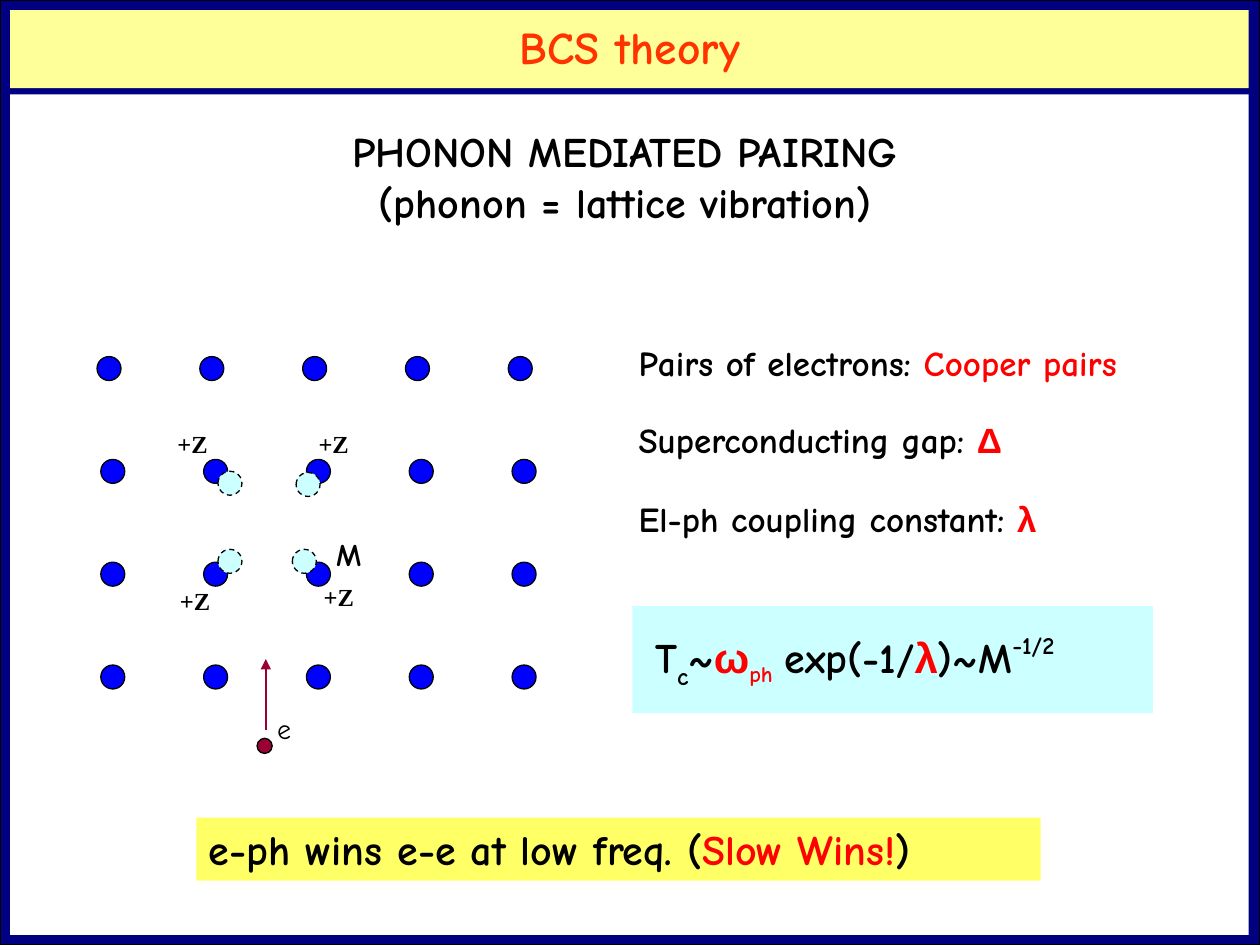
from lxml.etree import SubElement
from pptx import Presentation
from pptx.dml.color import RGBColor
from pptx.enum.dml import MSO_LINE
from pptx.enum.shapes import MSO_CONNECTOR, MSO_SHAPE
from pptx.enum.text import MSO_ANCHOR, PP_ALIGN
from pptx.oxml.ns import qn
from pptx.util import Inches, Pt

COLUMNS, ROWS = 100, 75
NAVY, PALE_YELLOW, YELLOW, CYAN = "000080", "FFFF99", "FFFF66", "CCFFFF"
BLACK, WHITE, RED, ORANGE, BLUE, CRIMSON = (
    "000000", "FFFFFF", "FF0000", "FF3300", "0000FF", "990033")
COMIC, GREEK, SERIF = "Comic Neue", "Arial", "Times New Roman"


def rgb(color):
    return RGBColor.from_string(color)


class SlideBuilder:
    """Draws on one slide; lengths are columns and rows of a 100 by 75 grid."""

    def __init__(self, presentation):
        self.slide = presentation.slides.add_slide(presentation.slide_layouts[5])
        self.column = presentation.slide_width / COLUMNS
        self.row = presentation.slide_height / ROWS

    def place(self, left, top, width, height):
        return [int(left * self.column), int(top * self.row),
                int(width * self.column), int(height * self.row)]

    def shape(self, kind, box, fill, line=None, dash=None):
        shape = self.slide.shapes.add_shape(kind, *self.place(*box))
        shape.shadow.inherit = False
        shape.fill.solid()
        shape.fill.fore_color.rgb = rgb(fill)
        if line:
            shape.line.color.rgb = rgb(line)
            shape.line.width = Pt(0.75)
            shape.line.dash_style = dash
        else:
            shape.line.fill.background()
        return shape

    def panel(self, box, fill, line=None):
        return self.shape(MSO_SHAPE.RECTANGLE, box, fill, line)

    def ball(self, left, top, size, fill, dash=None):
        return self.shape(MSO_SHAPE.OVAL, (left, top, size, size), fill, BLACK, dash)

    def arrow(self, x, start, end, color):
        begin_x, begin_y, end_x, end_y = self.place(x, start, x, end)
        connector = self.slide.shapes.add_connector(
            MSO_CONNECTOR.STRAIGHT, begin_x, begin_y, end_x, end_y)
        connector.line.color.rgb = rgb(color)
        connector.line.width = Pt(1.5)
        properties = connector.element.spPr
        SubElement(properties.find(qn("a:ln")), qn("a:tailEnd"), type="triangle")
        SubElement(properties, qn("a:effectLst"))

    def set_text(self, shape, lines, align=PP_ALIGN.LEFT, wrap=True, **style):
        """Fill a shape with lines, each a list of (text, changes to the style)."""
        frame = shape.text_frame
        frame.word_wrap = wrap
        frame.vertical_anchor = MSO_ANCHOR.TOP
        base = {"name": COMIC, "size": 24, "bold": True, "color": BLACK, "baseline": 0}
        for index, runs in enumerate(lines):
            paragraph = frame.add_paragraph() if index else frame.paragraphs[0]
            paragraph.alignment = align
            for text, changes in runs:
                run = paragraph.add_run()
                run.text = text
                values = {**base, **style, **changes}
                baseline = values.pop("baseline")
                run.font.color.rgb = rgb(values.pop("color"))
                values["size"] = Pt(values["size"])
                for name, value in values.items():
                    setattr(run.font, name, value)
                if baseline:
                    run.font._element.set("baseline", str(baseline * 1000))

    def text(self, box, lines, **style):
        self.set_text(self.slide.shapes.add_textbox(*self.place(*box)), lines, **style)

    def title(self, box, text, **style):
        title = self.slide.shapes.title
        title.left, title.top, title.width, title.height = self.place(*box)
        title.element.getparent().append(title.element)  # in front of the panels
        self.set_text(title, [[(text, {})]], align=PP_ALIGN.CENTER, **style)


def draw_frame(builder):
    builder.panel((0, 0, COLUMNS, ROWS), NAVY, BLACK)
    builder.panel((0.8, 7.5, 98.3, 66.7), WHITE)
    builder.panel((0.8, 0.8, 98.3, 6.2), PALE_YELLOW)
    builder.title((0, 1, COLUMNS, 5.3), "BCS theory", size=26, color=ORANGE)


def draw_lattice(builder):
    ion, pitch, electron = 1.9, 8.16, 1.2
    for row, left in enumerate((7.7, 8, 8, 8)):
        for column in range(5):
            builder.ball(left + column * pitch, 28.3 + row * pitch, ion, BLUE)
    for left, top in ((17.3, 37.4), (23.5, 37.5), (17.3, 43.6), (23.2, 43.6)):
        builder.ball(left, top, ion, CYAN, MSO_LINE.DASH)
    for left, top in ((13.1, 33.6), (24.3, 33.6), (13.3, 46), (24.7, 45.7)):
        builder.text((left, top, 4.4, 3.3), [[("+Z", {})]],
                     wrap=False, name=SERIF, size=14)
    builder.text((25.7, 42, 4.2, 4), [[("M", {})]], wrap=False, size=18)
    builder.ball(20.4, 58.6, electron, CRIMSON)
    builder.arrow(21.1, 57.9, 52.3, CRIMSON)
    builder.text((21, 56, 3.2, 3.7), [[("e", {})]], wrap=False, size=16, bold=False)


def draw_statements(builder):
    red = {"color": RED}
    greek = {"name": GREEK, "color": RED}
    builder.text((22.9, 9.5, 53.4, 9),
                 [[("PHONON MEDIATED PAIRING", {})],
                  [("(phonon = lattice vibration)", {})]], align=PP_ALIGN.CENTER)
    for top, label, value, look in (
            (26.6, "Pairs of electrons: ", "Cooper pairs", red),
            (32.7, "Superconducting gap: ", "Δ", greek),
            (39, "El-ph coupling constant: ", "λ", greek)):
        builder.text((49.7, top, 50, 4.3), [[(label, {}), (value, look)]], size=20)

    builder.panel((50.2, 48.1, 41.3, 8.5), CYAN)
    builder.text((51, 49.5, 42.9, 5), [[
        ("T", {}), ("c", {"baseline": -30}), ("~", {}), ("ω", greek),
        ("ph", {"size": 22, "color": RED, "baseline": -25}),
        (" ", {"name": GREEK}), ("exp(-1/", {}), ("λ", greek), (")~M", {}),
        ("-1/2", {"baseline": 45})]])

    conclusion = builder.panel((15.6, 64.9, 67, 5), YELLOW)
    builder.set_text(conclusion, [[("e-ph wins e-e at low freq. (", {}),
                                   ("Slow Wins!", red), (")", {})]])


def main():
    presentation = Presentation()
    presentation.slide_width, presentation.slide_height = Inches(10), Inches(7.5)
    builder = SlideBuilder(presentation)
    draw_frame(builder)
    draw_lattice(builder)
    draw_statements(builder)
    presentation.save("out.pptx")


if __name__ == "__main__":
    main()
